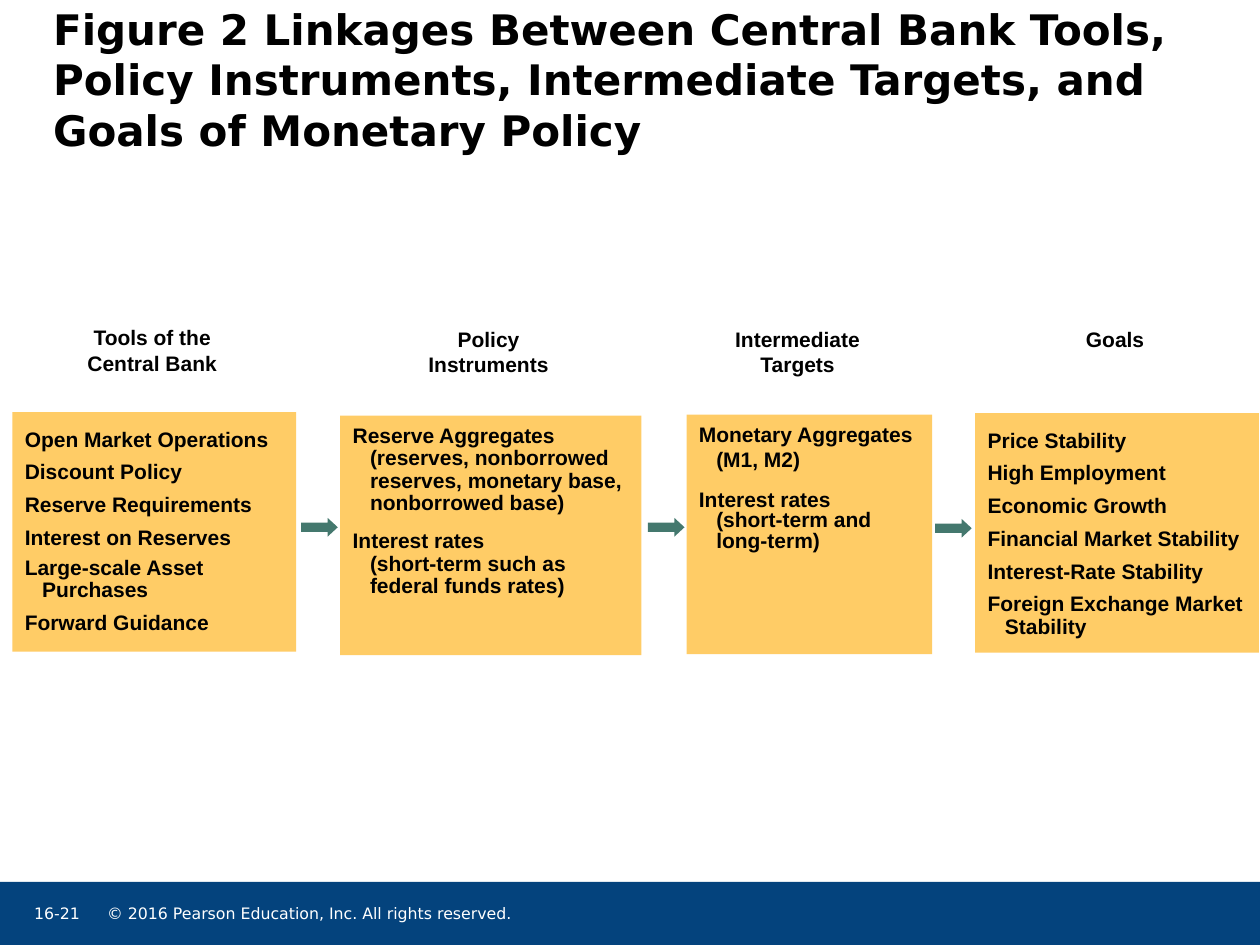
from dataclasses import dataclass

import pptx
import pptx.dml.color
import pptx.enum.shapes
import pptx.enum.text
import pptx.util

Cm = pptx.util.Cm
Pt = pptx.util.Pt
ALIGN = pptx.enum.text.PP_ALIGN
ANCHOR = pptx.enum.text.MSO_ANCHOR
SHAPE = pptx.enum.shapes.MSO_SHAPE


@dataclass(frozen=True)
class Theme:
    black: str = "000000"
    white: str = "FFFFFF"
    navy: str = "04437D"
    amber: str = "FFCC66"
    green: str = "44786E"
    title_font: str = "DejaVu Sans"
    body_font: str = "Arial"
    title_size: int = 24
    body_size: int = 12
    footer_size: int = 9


@dataclass(frozen=True)
class Stage:
    """One column; lines are (text, line spacing, indented)."""
    heading: tuple
    heading_left: float
    heading_top: float
    heading_height: float
    left: float
    top: float
    width: float
    lines: tuple


THEME = Theme()
BOX_HEIGHT = 4.83
HEADING_WIDTH = 2.74
INDENT = 0.35

STAGES = (
    Stage(("Tools of the", "Central Bank"), 1.7, 6.35, 1.47, 0.25, 8.31, 5.72, (
        ("Open Market Operations", 1.3, False),
        ("Discount Policy", 1.3, False),
        ("Reserve Requirements", 1.3, False),
        ("Interest on Reserves", 1.3, False),
        ("Large-scale Asset", 1.2, False),
        ("Purchases", 0.9, True),
        ("Forward Guidance", 1.3, False),
    )),
    Stage(("Policy", "Instruments"), 8.48, 6.38, 1.47, 6.86, 8.38, 6.07, (
        ("Reserve Aggregates", 1.0, False),
        ("(reserves, nonborrowed", 0.9, True),
        ("reserves, monetary base,", 0.9, True),
        ("nonborrowed base)", 0.9, True),
        ("Interest rates", 1.5, False),
        ("(short-term such as", 0.9, True),
        ("federal funds rates)", 0.9, True),
    )),
    Stage(("Intermediate", "Targets"), 14.71, 6.38, 1.73, 13.84, 8.36, 4.95, (
        ("Monetary Aggregates", 1.0, False),
        ("(M1, M2)", 1.0, True),
        ("Interest rates", 1.6, False),
        ("(short-term and", 0.8, True),
        ("long-term)", 0.8, True),
    )),
    Stage(("Goals",), 21.11, 6.38, 1.73, 19.66, 8.33, 5.72, (
        ("Price Stability", 1.3, False),
        ("High Employment", 1.3, False),
        ("Economic Growth", 1.3, False),
        ("Financial Market Stability", 1.3, False),
        ("Interest-Rate Stability", 1.3, False),
        ("Foreign Exchange Market", 1.3, False),
        ("Stability", 0.9, True),
    )),
)

ARROWS = ((6.07, 10.44), (13.06, 10.44), (18.85, 10.46))


def set_frame(frame, inset, wrap=True, anchor=ANCHOR.TOP):
    frame.margin_left = frame.margin_right = Cm(inset[0])
    frame.margin_top = frame.margin_bottom = Cm(inset[1])
    frame.word_wrap = wrap
    frame.auto_size = pptx.enum.text.MSO_AUTO_SIZE.NONE
    frame.vertical_anchor = anchor


def add_lines(frame, lines, font, size, color, bold=True, align=ALIGN.LEFT):
    for index, (text, spacing, indented) in enumerate(lines):
        paragraph = frame.paragraphs[0] if index == 0 else frame.add_paragraph()
        properties = paragraph._p.get_or_add_pPr()
        properties.set("marL", str(Cm(INDENT) if indented else 0))
        properties.set("indent", "0")
        paragraph.alignment = align
        paragraph.line_spacing = spacing
        paragraph.space_before = paragraph.space_after = Pt(0)
        run = paragraph.add_run()
        run.text = text
        run.font.name = font
        run.font.size = Pt(size)
        run.font.bold = bold
        run.font.color.rgb = pptx.dml.color.RGBColor.from_string(color)


def add_filled_shape(slide, kind, left, top, width, height, color):
    shape = slide.shapes.add_shape(kind, Cm(left), Cm(top), Cm(width), Cm(height))
    shape.shadow.inherit = False
    shape.fill.solid()
    shape.fill.fore_color.rgb = pptx.dml.color.RGBColor.from_string(color)
    shape.line.fill.background()
    return shape


def add_title(slide, text):
    title = slide.shapes.title
    title.left, title.top, title.width, title.height = Cm(1.07), Cm(0), Cm(23.29), Cm(3.18)
    set_frame(title.text_frame, (0, 0), anchor=ANCHOR.MIDDLE)
    add_lines(title.text_frame, [(text, 1.0, False)],
              THEME.title_font, THEME.title_size, THEME.black)


def add_footer_text(slide, text, left, width):
    box = slide.shapes.add_textbox(Cm(left), Cm(18.21), Cm(width), Cm(0.51))
    set_frame(box.text_frame, (0, 0), wrap=False)
    add_lines(box.text_frame, [(text, 1.0, False)],
              THEME.title_font, THEME.footer_size, THEME.white, bold=False)


def add_stage(slide, stage):
    heading = slide.shapes.add_textbox(Cm(stage.heading_left), Cm(stage.heading_top),
                                       Cm(HEADING_WIDTH), Cm(stage.heading_height))
    set_frame(heading.text_frame, (0.2, 0.2), wrap=False)
    add_lines(heading.text_frame, [(line, 1.0, False) for line in stage.heading],
              THEME.body_font, THEME.body_size, THEME.black, align=ALIGN.CENTER)

    box = add_filled_shape(slide, SHAPE.RECTANGLE, stage.left, stage.top,
                           stage.width, BOX_HEIGHT, THEME.amber)
    set_frame(box.text_frame, (0.25, 0.13))
    add_lines(box.text_frame, stage.lines,
              THEME.body_font, THEME.body_size, THEME.black)


def add_arrow(slide, left, top):
    arrow = add_filled_shape(slide, SHAPE.RIGHT_ARROW, left, top, 0.74, 0.38, THEME.green)
    arrow.adjustments[0] = 0.5
    arrow.adjustments[1] = 0.54


def main():
    presentation = pptx.Presentation()
    presentation.slide_width, presentation.slide_height = Cm(25.4), Cm(19.05)
    slide = presentation.slides.add_slide(presentation.slide_layouts[5])

    add_filled_shape(slide, SHAPE.RECTANGLE, 0, 17.78, 25.4, 1.27, THEME.navy)
    add_footer_text(slide, "© 2016 Pearson Education, Inc. All rights reserved.", 2.16, 14.99)
    add_footer_text(slide, "16-21", 0.69, 0.99)
    add_title(slide, "Figure 2 Linkages Between Central Bank Tools, Policy Instruments, "
                     "Intermediate Targets, and Goals of Monetary Policy")
    for stage in STAGES:
        add_stage(slide, stage)
    for left, top in ARROWS:
        add_arrow(slide, left, top)

    presentation.save("out.pptx")


if __name__ == "__main__":
    main()
